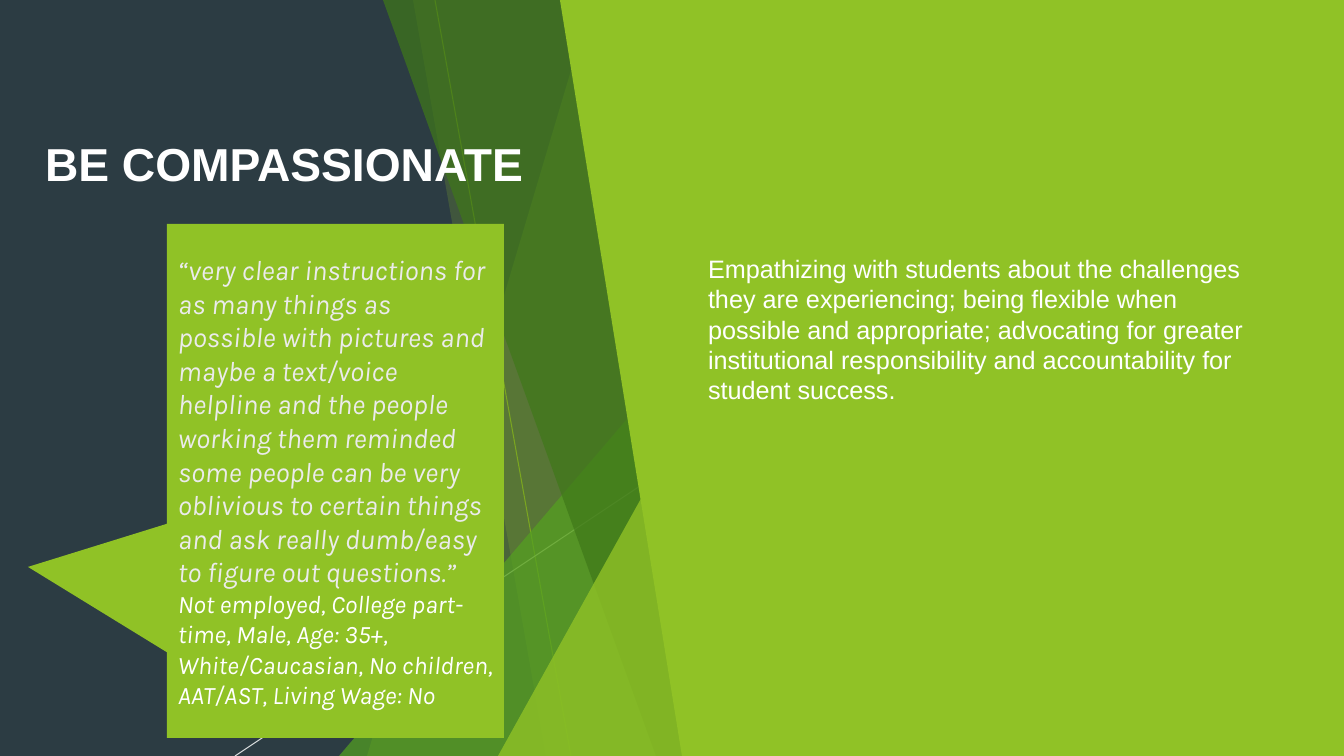
from lxml.etree import SubElement
from pptx import Presentation
from pptx.dml.color import RGBColor
from pptx.enum.shapes import MSO_CONNECTOR, MSO_SHAPE
from pptx.enum.text import MSO_ANCHOR, PP_ALIGN
from pptx.oxml.ns import qn
from pptx.util import Emu, Pt

SCALE = 914400 / 100.8
WIDTH, HEIGHT = 1344, 756
NAVY, LIME, WHITE = "2C3C43", "90C226", "FFFFFF"

TITLE = "BE COMPASSIONATE"
BODY = (
    "Empathizing with students about the challenges they are experiencing; "
    "being flexible when possible and appropriate; advocating for greater "
    "institutional responsibility and accountability for student success."
)
QUOTE = (
    "“very clear instructions for as many things as possible with pictures and "
    "maybe a text/voice helpline and the people working them reminded some people "
    "can be very oblivious to certain things and ask really dumb/easy to figure "
    "out questions.” "
)
SPEAKER = (
    "Not employed, College part-time, Male, Age: 35+, White/Caucasian, "
    "No children, AAT/AST, Living Wage: No"
)
QUOTE_RUNS = [(QUOTE, 20, "EBEBEB"), (SPEAKER, 18, WHITE)]

TITLE_BOX = (35, 57, 505, 212)
BODY_BOX = (660, 20, 622, 618)
CALLOUT_BOX = (167, 224, 337, 514)
CALLOUT_TIP = (28, 567)
CALLOUT_INSET = 11
BODY_INDENT = 48

RAYS = [((435, 0), (571, HEIGHT), "6C921D", 100), ((760, 406), (235, HEIGHT), WHITE, 80)]
FACET_RIGHT = 698
FACETS = [
    ("band", 592, 367, LIME, 30),
    ("band", 413, 546, LIME, 20),
    ("triangle", 339, 336, "54A021", 72),
    ("band", 383, 656, "3F7819", 70),
    ("triangle", 498, 396, LIME, 80),
]
PANEL = (560, 682)


def px(length):
    return Emu(round(length * SCALE))


def color(hex_text):
    return RGBColor.from_string(hex_text)


def set_alpha(shape, percent):
    if percent < 100:
        for paint in shape._element.spPr.iter(qn("a:srgbClr")):
            SubElement(paint, qn("a:alpha"), val=str(percent * 1000))


def paint_shape(shape, fill, percent=100):
    shape.shadow.inherit = False
    shape.fill.solid()
    shape.fill.fore_color.rgb = color(fill)
    shape.line.fill.background()
    set_alpha(shape, percent)


def add_ray(slide, start, end, hex_text, percent):
    ray = slide.shapes.add_connector(MSO_CONNECTOR.STRAIGHT, *map(px, start + end))
    ray.line.color.rgb = color(hex_text)
    ray.line.width = Pt(0.75)
    set_alpha(ray, percent)
    SubElement(ray._element.spPr, qn("a:effectLst"))


def add_band(slide, top_left, bottom_left, right):
    builder = slide.shapes.build_freeform(top_left, 0, scale=SCALE)
    builder.add_line_segments([(right, 0), (right, HEIGHT), (bottom_left, HEIGHT)])
    return builder.convert_to_shape()


def add_triangle(slide, left, top):
    box = (left, top, FACET_RIGHT - left, HEIGHT - top)
    triangle = slide.shapes.add_shape(MSO_SHAPE.ISOSCELES_TRIANGLE, *map(px, box))
    triangle.adjustments[0] = 1
    return triangle


def write_text(shape, text, size, bold=False):
    frame = shape.text_frame
    frame.word_wrap = True
    frame.vertical_anchor = MSO_ANCHOR.MIDDLE
    frame.text = text
    paragraph = frame.paragraphs[0]
    paragraph.alignment = PP_ALIGN.LEFT
    paragraph.font.name = "Arial"
    paragraph.font.size = Pt(size)
    paragraph.font.bold = bold
    paragraph.font.color.rgb = color(WHITE)


def add_title(slide):
    title = slide.shapes.title
    title.left, title.top, title.width, title.height = map(px, TITLE_BOX)
    write_text(title, TITLE, 33, bold=True)
    slide.shapes._spTree.append(title._element)


def add_body(slide):
    body = slide.shapes.add_textbox(*map(px, BODY_BOX))
    body.text_frame.margin_left = px(BODY_INDENT)
    write_text(body, BODY, 18)


def add_callout(slide):
    callout = slide.shapes.add_shape(MSO_SHAPE.RECTANGULAR_CALLOUT, *map(px, CALLOUT_BOX))
    starts, lengths = CALLOUT_BOX[:2], CALLOUT_BOX[2:]
    for index, (tip, start, length) in enumerate(zip(CALLOUT_TIP, starts, lengths)):
        callout.adjustments[index] = (tip - start) / length - 0.5
    paint_shape(callout, LIME)
    frame = callout.text_frame
    frame.word_wrap = True
    frame.margin_left = frame.margin_right = px(CALLOUT_INSET)
    frame.vertical_anchor = MSO_ANCHOR.MIDDLE
    paragraph = frame.paragraphs[0]
    paragraph.alignment = PP_ALIGN.LEFT
    paragraph.space_after = Pt(6)
    paragraph.font.name = "Karla"
    paragraph.font.italic = True
    for text, size, hex_text in QUOTE_RUNS:
        run = paragraph.add_run()
        run.text = text
        run.font.size = Pt(size)
        run.font.color.rgb = color(hex_text)


def main():
    """Build the slide about compassion and save it."""
    presentation = Presentation()
    presentation.slide_width, presentation.slide_height = px(WIDTH), px(HEIGHT)
    slide = presentation.slides.add_slide(presentation.slide_layouts[5])
    slide.background.fill.solid()
    slide.background.fill.fore_color.rgb = color(NAVY)
    for ray in RAYS:
        add_ray(slide, *ray)
    for kind, first, second, fill, percent in FACETS:
        if kind == "band":
            facet = add_band(slide, first, second, FACET_RIGHT)
        else:
            facet = add_triangle(slide, first, second)
        paint_shape(facet, fill, percent)
    add_title(slide)
    paint_shape(add_band(slide, *PANEL, WIDTH), LIME)
    add_body(slide)
    add_callout(slide)
    presentation.save("out.pptx")


if __name__ == "__main__":
    main()
